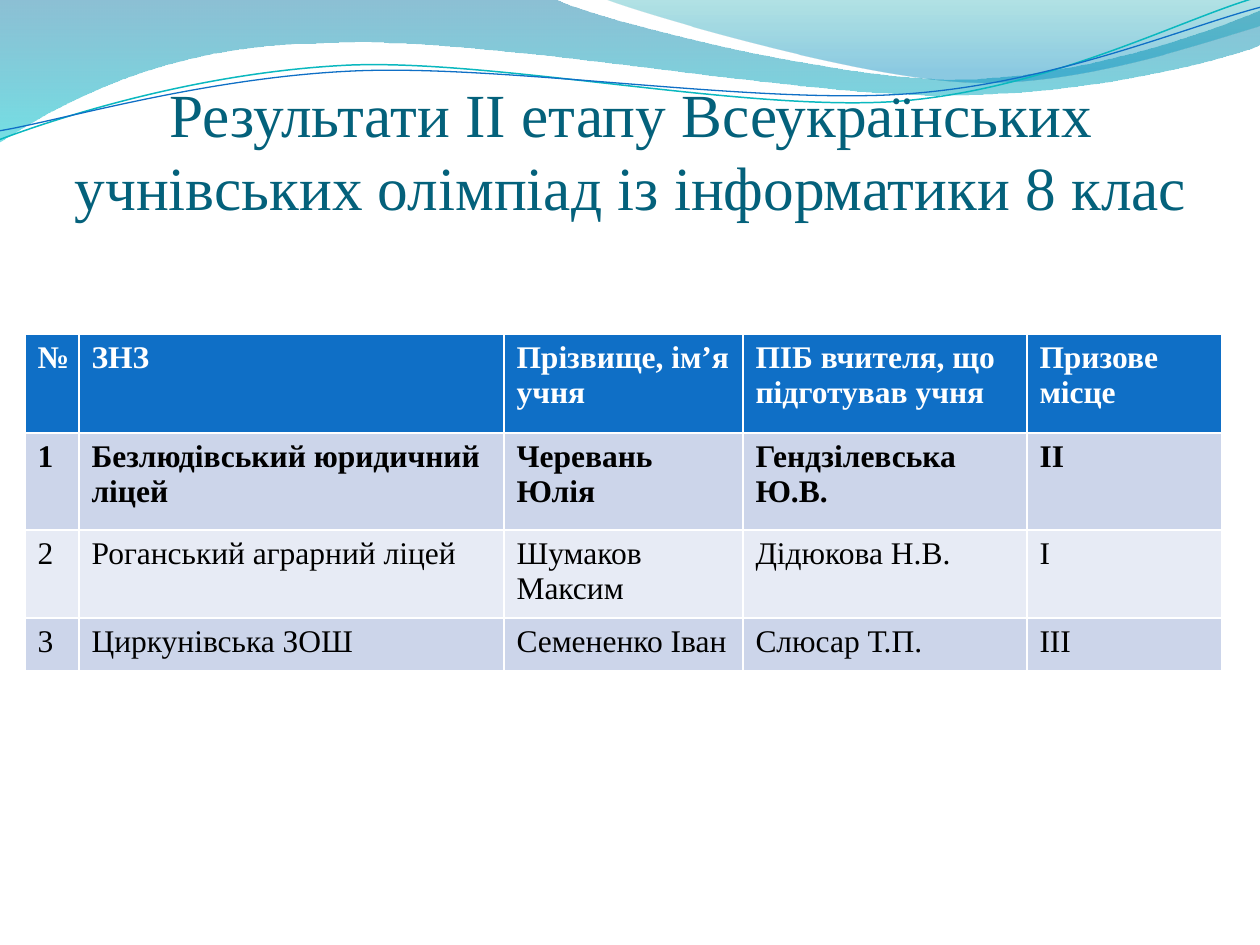
from pptx import Presentation
from pptx.dml.color import RGBColor
from pptx.enum.text import MSO_ANCHOR, PP_ALIGN
from pptx.oxml.ns import qn
from pptx.util import Pt
from lxml import etree

PX = 914400 / 126
CENTER, BOTTOM = PP_ALIGN.CENTER, MSO_ANCHOR.BOTTOM

THEME = {
    "font": "Times New Roman", "title_size": 35, "cell_size": 18,
    "title": "04617B", "header": "0F6FC6", "bands": ("CCD5EA", "E7EBF5"),
    "white": "FFFFFF", "text": "000000",
}

TITLE = "Результати ІІ етапу Всеукраїнських учнівських олімпіад із інформатики 8 клас"
TITLE_BOX = (64, 66, 1134, 157)

ROWS = [
    ("№", "ЗНЗ", "Прізвище, ім’я учня", "ПІБ вчителя, що підготував учня", "Призове місце"),
    ("1", "Безлюдівський юридичний ліцей", "Черевань Юлія", "Гендзілевська Ю.В.", "ІІ"),
    ("2", "Роганський аграрний ліцей", "Шумаков Максим", "Дідюкова Н.В.", "І"),
    ("3", "Циркунівська ЗОШ", "Семененко Іван", "Слюсар Т.П.", "ІІІ"),
]
BOLD_ROWS = 2
TABLE_AT = (25, 334)
COL_WIDTHS = (54, 425, 239, 284, 195)
ROW_HEIGHTS = (99, 97, 53, 53)

# A path is its start, then steps: one point for a line, three for a Bezier curve.
# A gradient stop is (position, colour, opacity in percent).
BANDS = [
    {"path": [(0, -1), [(554, -1)],
              [(600, 21), (837, 79), (955, 79)], [(1075, 79), (1207, 33), (1260, 11)],
              [(1261, 45)], [(1239, 55), (1096, 96), (940, 95)],
              [(784, 95), (481, 35), (324, 43)], [(163, 44), (58, 105), (-1, 142)],
              [(0, -1)]],
     "stops": [(0, "0074A1", 45), (1, "00C6CF", 55)]},
    {"path": [(604, -1), [(641, 14), (859, 78), (969, 82)],
              [(1079, 87), (1211, 40), (1260, 26)], [(1260, 0)], [(604, -1)]],
     "stops": [(0, "00A1A9", 30), (0.8, "008BBF", 45)]},
]
WAVE_ROTATION = 357.3
WAVES = [
    {"path": [(-3, 110), [(59, 90), (200, 52), (350, 52)],
              [(498, 53), (745, 118), (897, 114)], [(1048, 109), (1184, 45), (1260, 27)]],
     "color": "0AB8BF", "width": 0.85},
    {"path": [(-2, 101), [(58, 94), (207, 57), (357, 58)],
              [(508, 59), (751, 110), (902, 107)], [(1052, 104), (1187, 53), (1263, 37)]],
     "color": "0F6FC6", "width": 0.75},
]


def px(n):
    return round(n * PX)


def rgb(name):
    return RGBColor.from_string(name)


def add_outline(shapes, path, close):
    """Build a freeform through all points, then join each three into a curve."""
    start, *steps = path
    builder = shapes.build_freeform(*start, scale=PX)
    builder.add_line_segments([point for step in steps for point in step], close=close)
    sp = builder.convert_to_shape()
    sp.shadow.inherit = False
    lines = iter(list(sp._element.spPr.iter(qn("a:lnTo"))))
    for step in steps:
        first, *others = [next(lines) for _ in step]
        if others:
            curve = etree.Element(qn("a:cubicBezTo"))
            first.addprevious(curve)
            for line in (first, *others):
                curve.append(line[0])
                line.getparent().remove(line)
    return sp


def add_band(shapes, path, stops):
    sp = add_outline(shapes, path, True)
    sp.line.fill.background()
    sp.fill.gradient()
    sp.fill.gradient_angle = 270
    for stop, (position, color, _) in zip(sp.fill.gradient_stops, stops):
        stop.position = position
        stop.color.rgb = rgb(color)
    colors = sp._element.spPr.iter(qn("a:srgbClr"))
    for node, (_, _, opacity) in zip(colors, stops):
        etree.SubElement(node, qn("a:alpha"), val=str(opacity * 1000))


def add_wave(shapes, path, color, width):
    sp = add_outline(shapes, path, False)
    sp.rotation = WAVE_ROTATION
    sp.fill.background()
    sp.line.color.rgb = rgb(color)
    sp.line.width = Pt(width)


def write(tf, text, size, color, bold=False):
    p = tf.paragraphs[0]
    r = p.add_run()
    r.text = text
    r.font.color.rgb = rgb(color)
    for name, value in {"name": THEME["font"], "size": Pt(size), "bold": bold}.items():
        setattr(r.font, name, value)
    return p


def add_title(slide):
    tf = slide.shapes.add_textbox(*map(px, TITLE_BOX)).text_frame
    settings = {"word_wrap": True, "vertical_anchor": BOTTOM, "margin_left": 0,
                "margin_right": 0, "margin_top": px(6), "margin_bottom": 0}
    for name, value in settings.items():
        setattr(tf, name, value)
    write(tf, TITLE, THEME["title_size"], THEME["title"]).alignment = CENTER


def add_results(slide):
    size = (sum(COL_WIDTHS), sum(ROW_HEIGHTS))
    table = slide.shapes.add_table(len(ROWS), len(COL_WIDTHS),
                                   *map(px, TABLE_AT + size)).table
    for column, width in zip(table.columns, COL_WIDTHS):
        column.width = px(width)
    for i, (row, height) in enumerate(zip(table.rows, ROW_HEIGHTS)):
        row.height = px(height)
        fill = THEME["bands"][(i - 1) % 2] if i else THEME["header"]
        color = THEME["text"] if i else THEME["white"]
        for cell, text in zip(row.cells, ROWS[i]):
            cell.fill.solid()
            cell.fill.fore_color.rgb = rgb(fill)
            write(cell.text_frame, text, THEME["cell_size"], color, i < BOLD_ROWS)


def main():
    prs = Presentation()
    prs.slide_width, prs.slide_height = px(1260), px(945)
    slide = prs.slides.add_slide(prs.slide_layouts[6])
    for band in BANDS:
        add_band(slide.shapes, **band)
    waves = slide.shapes.add_group_shape()
    for wave in WAVES:
        add_wave(waves.shapes, **wave)
    add_title(slide)
    add_results(slide)
    prs.save("out.pptx")


if __name__ == "__main__":
    main()
